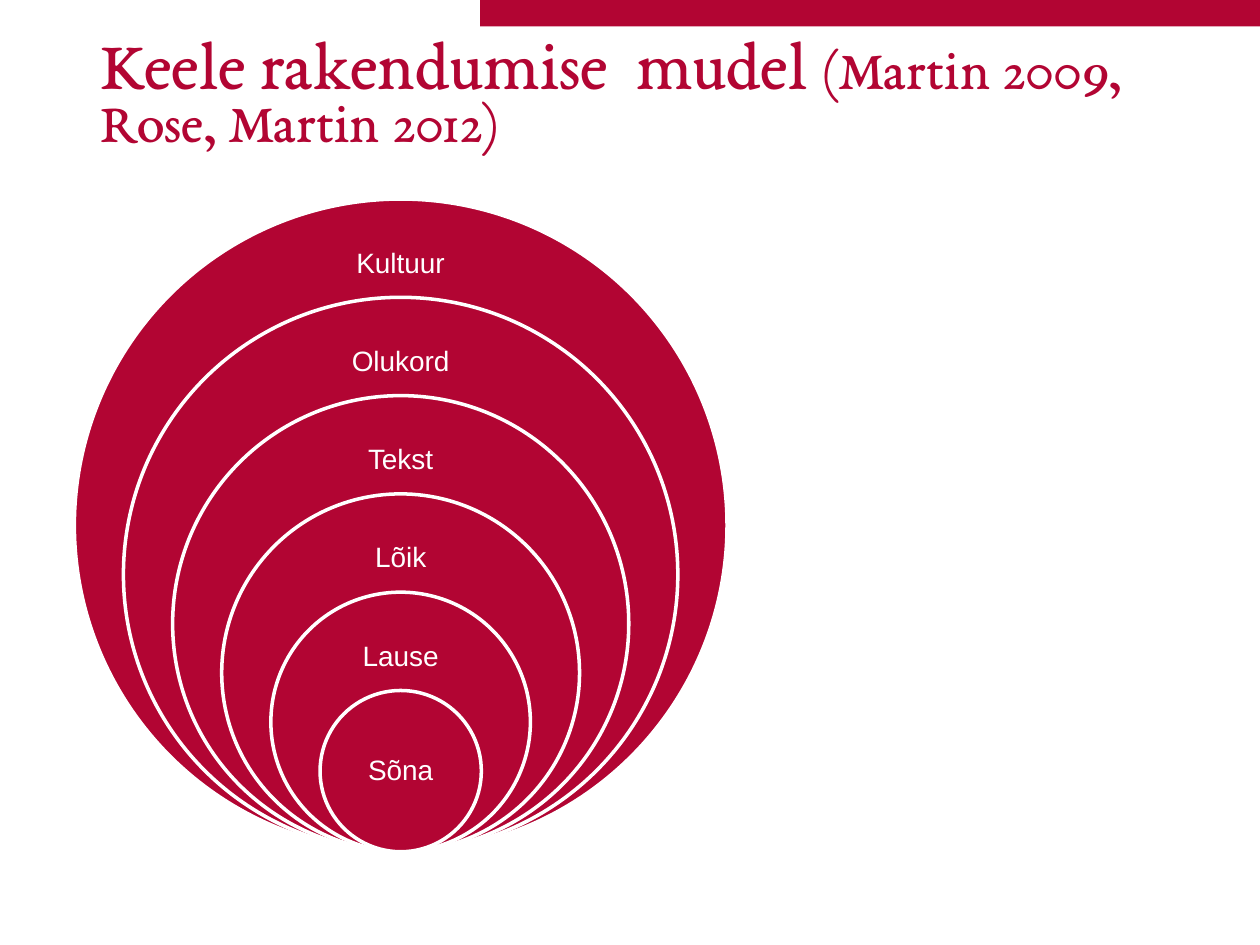
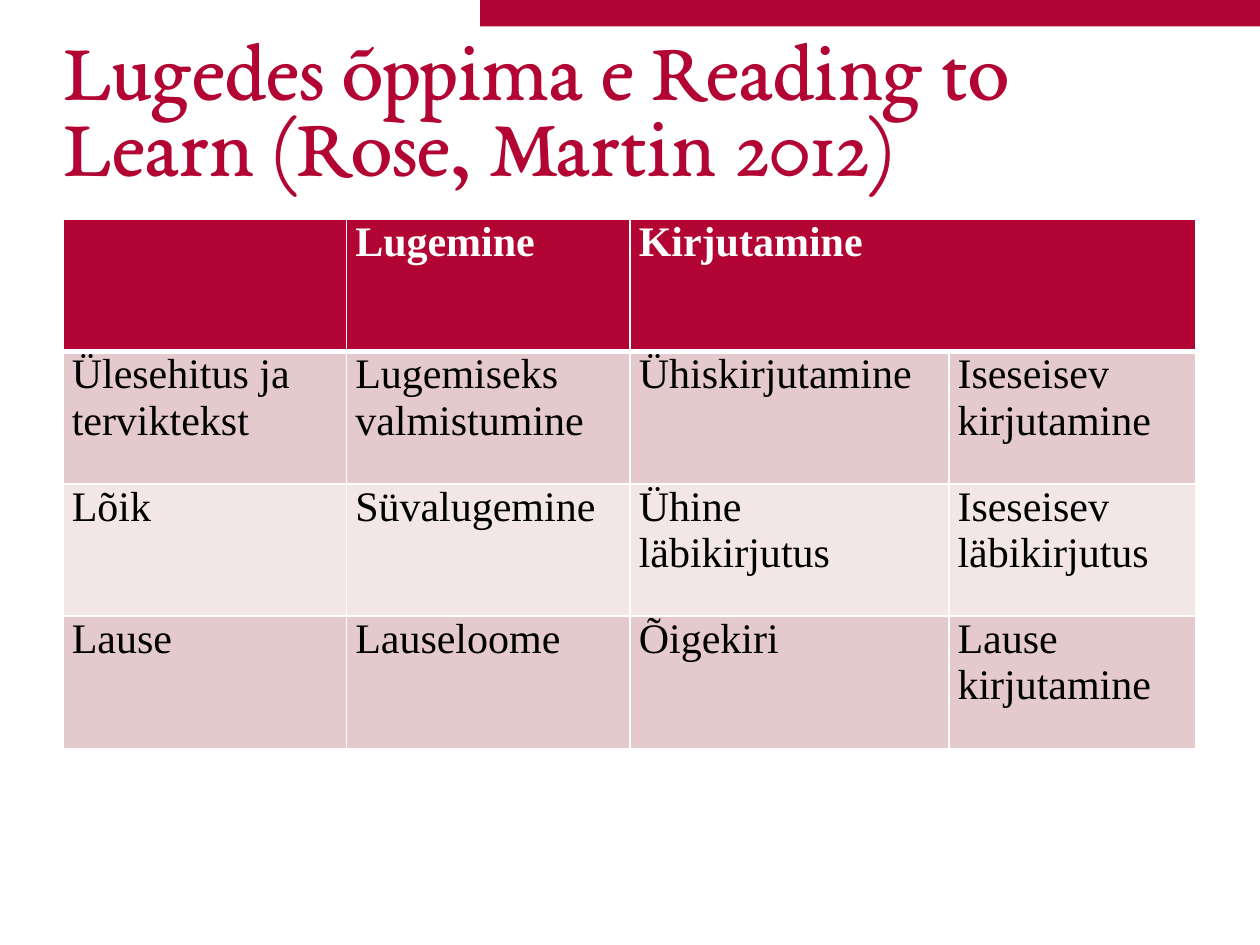
from dataclasses import dataclass
from typing import Any

import pptx
import pptx.dml.color
import pptx.enum.shapes
import pptx.enum.text
import pptx.oxml
import pptx.oxml.ns
import pptx.util
from pptx.util import Inches, Pt

COLORS = {
    "crimson": "B20533",
    "white": "FFFFFF",
    "black": "000000",
    "rose": "E4CACC",
    "blush": "F2E6E7",
}
ANCHOR = pptx.enum.text.MSO_ANCHOR
ALIGN = pptx.enum.text.PP_ALIGN
SHAPE = pptx.enum.shapes.MSO_SHAPE

TITLE_FONT = {"name": "EB Garamond", "bold": False}
RING_FONT = {"name": "Arial", "size": Pt(16)}
CELL_FONT = {"name": "Times New Roman", "size": Pt(24)}

RING_NAMES = ["Kultuur", "Olukord", "Tekst", "Lõik", "Lause", "Sõna"]
RING_CENTER, RING_BOTTOM = 3.18, 6.76
OUTER_DIAMETER, DIAMETER_STEP = 5.18, 0.78
LABEL_DROP, LABEL_WIDTH, LABEL_HEIGHT = 0.26, 1.9, 0.51

COLUMN_WIDTHS = [2.25, 2.25, 2.53, 1.96]
ROW_HEIGHT = 1.05
READING_STEPS = [
    ["", "Lugemine", "Kirjutamine", ""],
    ["Ülesehitus ja terviktekst", "Lugemiseks valmistumine", "Ühiskirjutamine", "Iseseisev kirjutamine"],
    ["Lõik", "Süvalugemine", "Ühine läbikirjutus", "Iseseisev läbikirjutus"],
    ["Lause", "Lauseloome", "Õigekiri", "Lause kirjutamine"],
]


@dataclass(frozen=True)
class Box:
    left: float
    top: float
    width: float
    height: float

    def lengths(self) -> list[int]:
        return [Inches(v) for v in (self.left, self.top, self.width, self.height)]


@dataclass(frozen=True)
class Phrase:
    text: str
    size: int


@dataclass(frozen=True)
class Title:
    box: Box
    inset: float
    anchor: Any
    phrases: list[Phrase]


@dataclass(frozen=True)
class Ring:
    name: str
    diameter: float
    innermost: bool

    @property
    def box(self) -> Box:
        return Box(RING_CENTER - self.diameter / 2, RING_BOTTOM - self.diameter,
                   self.diameter, self.diameter)

    @property
    def label_box(self) -> Box:
        drop = (self.diameter - LABEL_HEIGHT) / 2 if self.innermost else LABEL_DROP
        return Box(RING_CENTER - LABEL_WIDTH / 2, self.box.top + drop, LABEL_WIDTH, LABEL_HEIGHT)


def rgb(color: str) -> pptx.dml.color.RGBColor:
    return pptx.dml.color.RGBColor.from_string(COLORS[color])


def apply(target: Any, values: dict[str, Any]) -> None:
    for attribute, value in values.items():
        setattr(target, attribute, value)


def paint(target: Any, color: str) -> None:
    target.fill.solid()
    target.fill.fore_color.rgb = rgb(color)


def add_shape(slide: Any, kind: Any, box: Box) -> Any:
    shape = slide.shapes.add_shape(kind, *box.lengths())
    shape.shadow.inherit = False
    paint(shape, "crimson")
    return shape


def add_text(slide: Any, box: Box, inset: float, anchor: Any, spacing: float) -> Any:
    frame = slide.shapes.add_textbox(*box.lengths()).text_frame
    margins = {f"margin_{side}": Inches(inset) for side in ("left", "top", "right", "bottom")}
    apply(frame, {"word_wrap": True, "vertical_anchor": anchor, **margins})
    paragraph = frame.paragraphs[0]
    paragraph.line_spacing = spacing
    return paragraph


def add_run(paragraph: Any, text: str, color: str, font: dict[str, Any]) -> None:
    run = paragraph.add_run()
    run.text = text
    apply(run.font, font)
    run.font.color.rgb = rgb(color)


def add_titled_slide(deck: Any, title: Title) -> Any:
    slide = deck.slides.add_slide(deck.slide_layouts[6])
    band = add_shape(slide, SHAPE.RECTANGLE, Box(3.81, 0, 6.19, 0.21))
    band.line.fill.background()
    paragraph = add_text(slide, title.box, title.inset, title.anchor, 0.75)
    for phrase in title.phrases:
        add_run(paragraph, phrase.text, "crimson", {**TITLE_FONT, "size": Pt(phrase.size)})
    return slide


def add_ring(slide: Any, ring: Ring) -> None:
    circle = add_shape(slide, SHAPE.OVAL, ring.box)
    circle.line.color.rgb = rgb("white")
    circle.line.width = Pt(2)
    label = add_text(slide, ring.label_box, 0.12, ANCHOR.MIDDLE, 0.9)
    label.alignment = ALIGN.CENTER
    add_run(label, ring.name, "white", RING_FONT)


def set_borders(cell: Any, widths: dict[str, float]) -> None:
    properties = cell._tc.get_or_add_tcPr()
    for position, (side, width) in enumerate(widths.items()):
        border = pptx.oxml.parse_xml(
            f'<a:ln{side} {pptx.oxml.ns.nsdecls("a")} w="{Pt(width)}">'
            f'<a:solidFill><a:srgbClr val="{COLORS["white"]}"/></a:solidFill></a:ln{side}>'
        )
        properties.insert(position, border)


def add_reading_table(slide: Any) -> None:
    box = Box(0.5, 1.74, sum(COLUMN_WIDTHS), ROW_HEIGHT * len(READING_STEPS))
    table = slide.shapes.add_table(len(READING_STEPS), len(COLUMN_WIDTHS), *box.lengths()).table
    for column, width in zip(table.columns, COLUMN_WIDTHS):
        column.width = Inches(width)
    cell_margins = {"margin_left": Inches(0.07), "margin_right": Inches(0.07),
                    "margin_top": 0, "margin_bottom": 0}
    for r, steps in enumerate(READING_STEPS):
        header = r == 0
        fill = "crimson" if header else ("rose" if r % 2 else "blush")
        for c, step in enumerate(steps):
            cell = table.cell(r, c)
            apply(cell, cell_margins)
            paint(cell, fill)
            set_borders(cell, {"L": 1, "R": 1, "T": 3 if r == 1 else 1, "B": 3 if header else 1})
            if step:
                add_run(cell.text_frame.paragraphs[0], step, "white" if header else "black",
                        {**CELL_FONT, "bold": header})
    table.cell(0, 2).merge(table.cell(0, 3))


def main() -> None:
    deck = pptx.Presentation()
    apply(deck, {"slide_width": Inches(10), "slide_height": Inches(7.5)})

    model = add_titled_slide(deck, Title(
        Box(0.7, 0.21, 8.96, 1.11), 0.1, ANCHOR.TOP,
        [Phrase("Keele rakendumise  mudel ", 40), Phrase("(Martin 2009, Rose, Martin 2012)", 32)],
    ))
    for level, name in enumerate(RING_NAMES):
        add_ring(model, Ring(name, OUTER_DIAMETER - DIAMETER_STEP * level, name == RING_NAMES[-1]))

    reading = add_titled_slide(deck, Title(
        Box(0.5, 0.3, 8.99, 1.24), 0, ANCHOR.MIDDLE,
        [Phrase("Lugedes õppima e Reading to Learn (Rose, Martin 2012)", 48)],
    ))
    add_reading_table(reading)

    deck.save("out.pptx")


if __name__ == "__main__":
    main()
